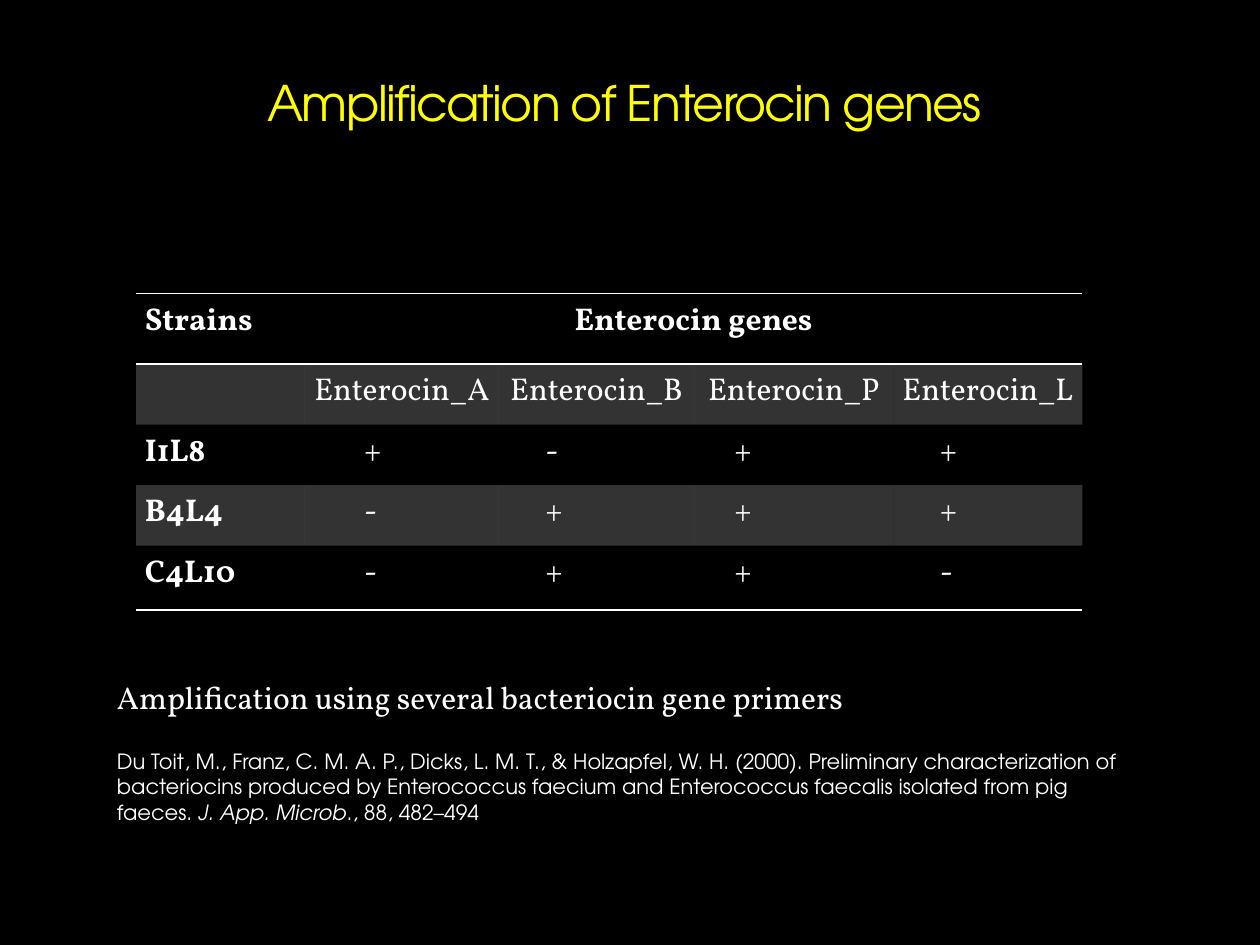
from lxml.etree import SubElement
from pptx import Presentation
from pptx.dml.color import RGBColor
from pptx.enum.text import MSO_ANCHOR as Anchor, PP_ALIGN as Align
from pptx.oxml import parse_xml
from pptx.oxml.ns import nsdecls, qn
from pptx.util import Inches, Pt

COLOURS = {"back": "000000", "title": "FFFF00", "outline": "462219", "text": "FFFFFF"}
SANS, SERIF = "TeX Gyre Adventor", "Vollkorn"
NO_STYLE = "{2D5ABB26-0587-4C30-8999-92F81FD0307C}"
TITLE_BOX = (0.58, 0.42, 8.75, 0.67)
TABLE_BOX = (1.08, 2.33, 7.5, 2.5)
CAPTION_BOX = (0.83, 5.33, 8.25, 1.31)
COLUMNS = (1.34, 1.54, 1.55, 1.58, 1.5)
ROWS = (0.56, 0.48, 0.48, 0.48, 0.51)
SIGN_INDENTS = (0.07, 0.47, 0.37, 0.32, 0.37)
GENES = [
    ["Strains", "Enterocin genes", "", "", ""],
    ["", "Enterocin_A", "Enterocin_B", "Enterocin_P", "Enterocin_L"],
    ["I1L8", "+", "-", "+", "+"],
    ["B4L4", "-", "+", "+", "+"],
    ["C4L10", "-", "+", "+", "-"],
]
RULES = {0: ("lnT", "lnB"), 4: ("lnB",)}
SHADED = (1, 3)


def set_all(target, values):
    """Set every attribute named in a dict of values."""
    for name, value in values.items():
        setattr(target, name, value)


def add_span(para, text, colour="text", **style):
    """Add a run of text in the given colour and font style."""
    span = para.add_run()
    span.text = text
    set_all(span.font, style)
    span.font.color.rgb = RGBColor.from_string(COLOURS[colour])
    return span


def line_xml(tag, colour, points, alpha=100):
    """Return a solid line element of the given width and opacity."""
    return parse_xml(
        f'<a:{tag} {nsdecls("a")} w="{int(Pt(points))}"><a:solidFill>'
        f'<a:srgbClr val="{COLOURS[colour]}"><a:alpha val="{alpha * 1000}"/></a:srgbClr>'
        f'</a:solidFill><a:prstDash val="solid"/></a:{tag}>'
    )


def add_title(page, box):
    """Fill the title placeholder and fit it to the box."""
    title = page.shapes.title
    set_all(title, dict(zip(("left", "top", "width", "height"), map(Inches, box))))
    set_all(title.text_frame, {"vertical_anchor": Anchor.BOTTOM, "word_wrap": True})
    para = title.text_frame.paragraphs[0]
    para.alignment = Align.CENTER
    span = add_span(para, "Amplification of Enterocin genes", "title", name=SANS, size=Pt(28))
    props = span.font._element
    props.set("spc", "-100")
    props.insert(0, line_xml("ln", "outline", 0.25, 25))


def format_cell(cell, row, column):
    """Write, shade and rule one cell of the gene table."""
    is_sign = row > 1 and column > 0
    indent = SIGN_INDENTS[column] if is_sign else 0.07
    set_all(cell, {"margin_left": Inches(indent), "margin_right": Inches(0.07),
                   "margin_top": 0, "margin_bottom": 0})
    para = cell.text_frame.paragraphs[0]
    para.line_spacing = 1.15
    if column == 0:
        para.alignment = Align.JUSTIFY
    else:
        para.alignment = Align.LEFT if is_sign else Align.CENTER
    if GENES[row][column]:
        add_span(para, GENES[row][column], name=SERIF, size=Pt(18),
                 bold=row == 0 or column == 0)
    if row in SHADED:
        cell.fill.solid()
        cell.fill.fore_color.rgb = RGBColor.from_string(COLOURS["text"])
        colour = cell._tc.tcPr.find(".//" + qn("a:srgbClr"))
        SubElement(colour, qn("a:alpha"), val="20000")
    else:
        cell.fill.background()
    for place, tag in enumerate(RULES.get(row, ())):
        cell._tc.tcPr.insert(place, line_xml(tag, "text", 1))


def add_gene_table(page, box):
    """Place the table of strains and enterocin genes in the box."""
    frame = page.shapes.add_table(len(ROWS), len(COLUMNS), *map(Inches, box))
    table = frame.table
    set_all(table, {"first_row": False, "horz_banding": False})
    table._tbl.tblPr.find(qn("a:tableStyleId")).text = NO_STYLE
    for column, width in zip(table.columns, COLUMNS):
        column.width = Inches(width)
    for row, height in zip(table.rows, ROWS):
        row.height = Inches(height)
    table.cell(0, 1).merge(table.cell(0, len(COLUMNS) - 1))
    for row in range(len(ROWS)):
        for column in range(len(COLUMNS)):
            format_cell(table.cell(row, column), row, column)


def add_caption(page, box):
    """Place the caption and its literature reference in the box."""
    text = page.shapes.add_textbox(*map(Inches, box)).text_frame
    text.word_wrap = True
    add_span(text.paragraphs[0], "Amplification using several bacteriocin gene primers",
             name=SERIF, size=Pt(18))
    para = text.add_paragraph()
    para.space_before = Pt(19)
    reference = [
        ("Du Toit, M., Franz, C. M. A. P., Dicks, L. M. T., & Holzapfel, W. H. (2000). "
         "Preliminary characterization of bacteriocins produced by Enterococcus faecium "
         "and Enterococcus faecalis isolated from pig faeces. ", False),
        ("J. App. Microb", True),
        ("., 88, 482–494", False),
    ]
    for words, italic in reference:
        add_span(para, words, name=SANS, size=Pt(12), italic=italic)


def main():
    """Build the slide and save the deck."""
    deck = Presentation()
    set_all(deck, {"slide_width": Inches(10), "slide_height": Inches(7.5)})
    page = deck.slides.add_slide(deck.slide_layouts[5])
    page.background.fill.solid()
    page.background.fill.fore_color.rgb = RGBColor.from_string(COLOURS["back"])
    add_title(page, TITLE_BOX)
    add_gene_table(page, TABLE_BOX)
    add_caption(page, CAPTION_BOX)
    deck.save("out.pptx")


if __name__ == "__main__":
    main()
